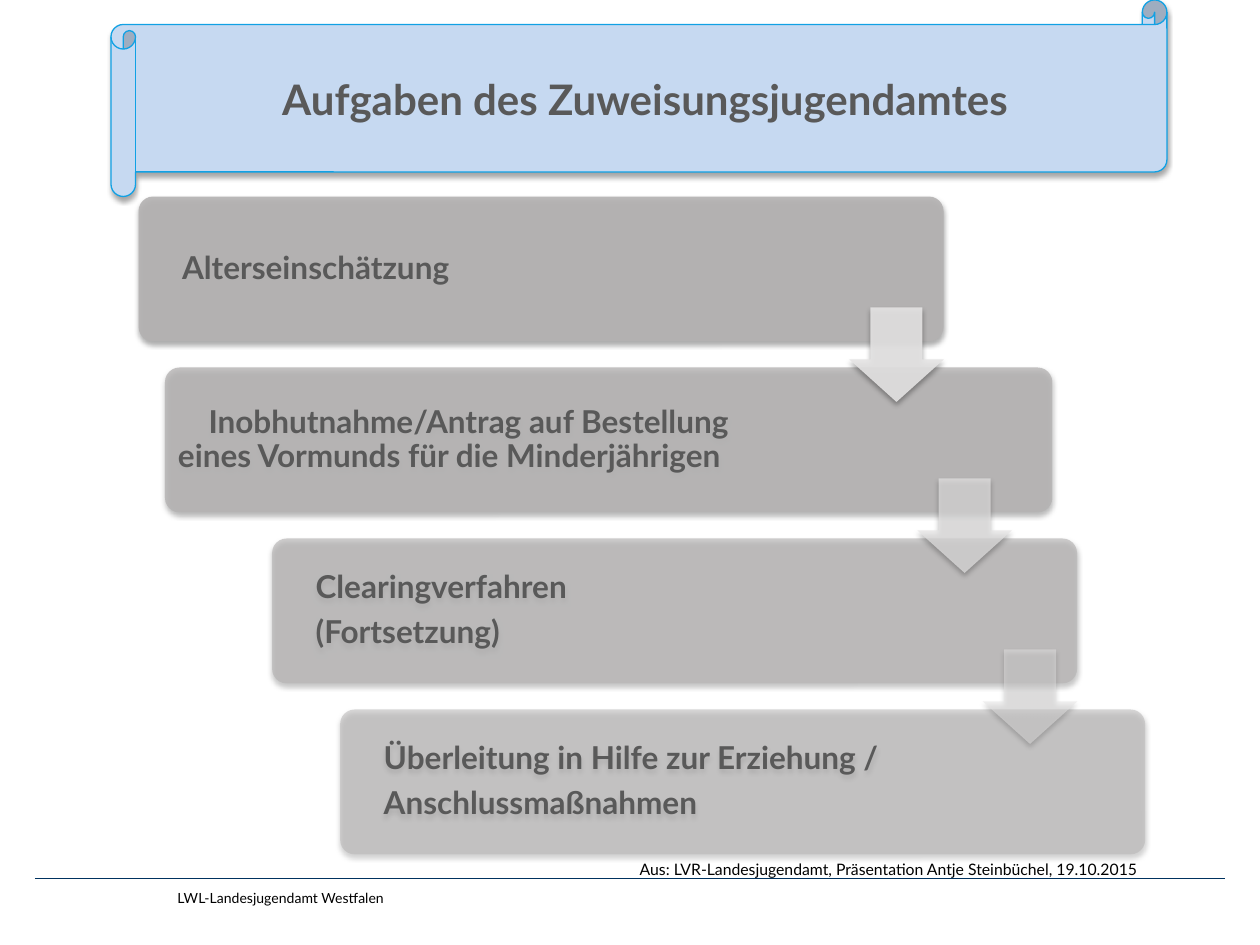
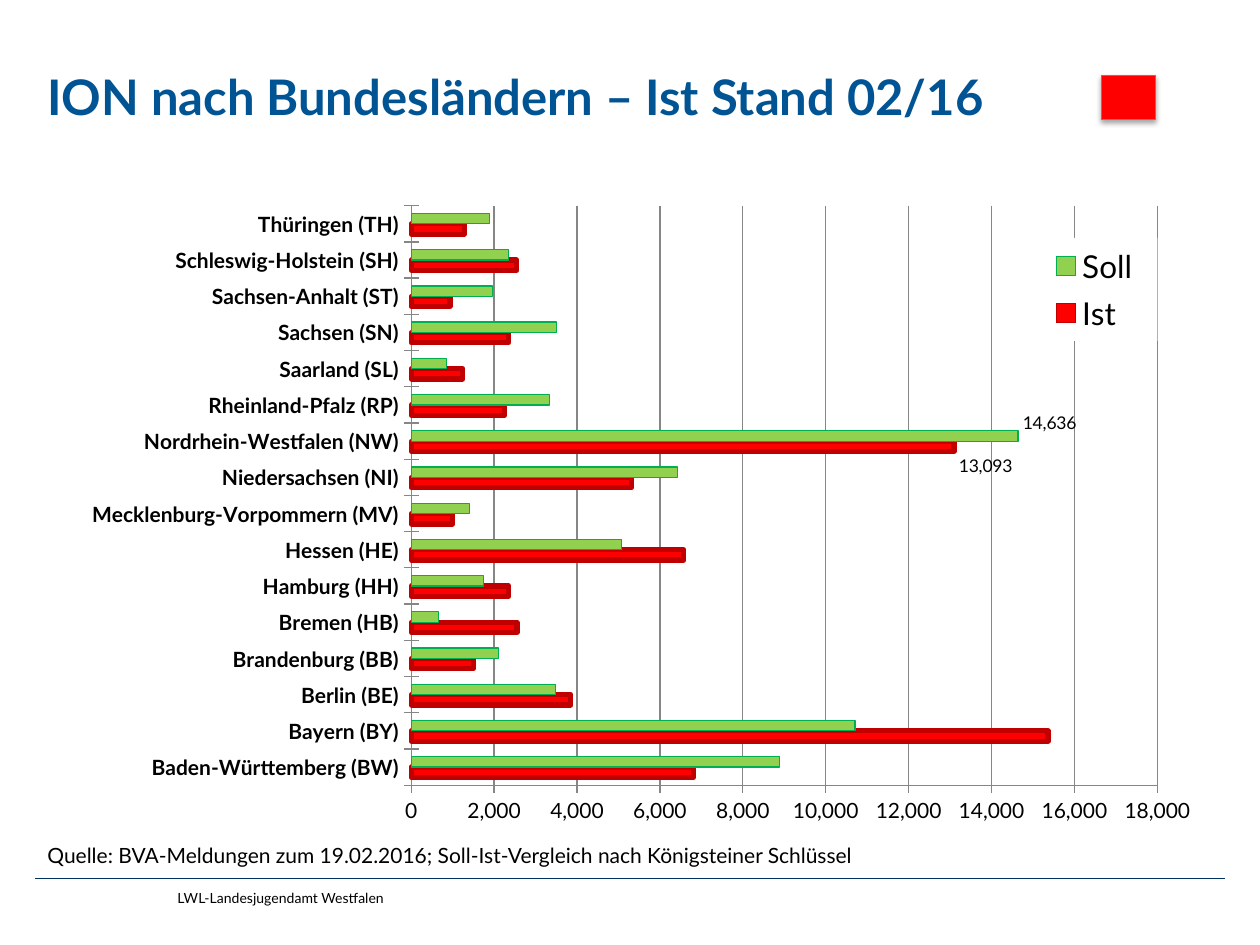
from lxml.etree import SubElement
from pptx import Presentation
from pptx.chart.data import CategoryChartData
from pptx.dml.color import RGBColor
from pptx.enum.chart import XL_CHART_TYPE, XL_LABEL_POSITION, XL_LEGEND_POSITION, XL_TICK_MARK
from pptx.enum.shapes import MSO_CONNECTOR, MSO_SHAPE
from pptx.enum.text import MSO_ANCHOR, PP_ALIGN
from pptx.oxml import parse_xml
from pptx.oxml.ns import nsdecls, qn
from pptx.util import Pt

COLORS = {
    "text": "000000", "heading": "005493", "step_text": "595959",
    "rule": "00325F", "accent": "11A1E4", "banner": "C6D9F1",
    "step": "B4B2B2", "arrow": "E5E4E4", "grid": "868686",
    "red": "FF0000", "dark_red": "C00000", "green": "92D050",
    "dark_green": "00B050", "white": "FFFFFF",
}
RGB = {name: RGBColor.from_string(value) for name, value in COLORS.items()}
FONT = "Lato"


def write_text(shape, lines, size, color="text", bold=False, indent=0, inset=None,
               anchor=MSO_ANCHOR.TOP, **paragraph_format):
    """Fill a shape with one paragraph per line."""
    frame = shape.text_frame
    frame.word_wrap = True
    frame.vertical_anchor = anchor
    if inset is not None:
        for side in ("left", "right", "top", "bottom"):
            setattr(frame, f"margin_{side}", Pt(inset))
    for number, line in enumerate(lines):
        paragraph = frame.add_paragraph() if number else frame.paragraphs[0]
        paragraph.text = line
        if indent:
            properties = paragraph._p.get_or_add_pPr()
            properties.set("marL", "0")
            properties.set("indent", str(Pt(indent)))
        for name, value in paragraph_format.items():
            setattr(paragraph, name, value)
        for run in paragraph.runs:
            for name, value in {"name": FONT, "size": Pt(size), "bold": bold}.items():
                setattr(run.font, name, value)
            run.font.color.rgb = RGB[color]


def add_filled(slide, kind, box, fill, opacity=100, line=None, adjustments=()):
    """Add a preset shape with a soft shadow below it."""
    shape = slide.shapes.add_shape(kind, *map(Pt, box))
    for number, value in enumerate(adjustments):
        shape.adjustments[number] = value
    shape.fill.solid()
    shape.fill.fore_color.rgb = RGB[fill]
    fill_color = shape.element.spPr.find(f"{qn('a:solidFill')}/{qn('a:srgbClr')}")
    if opacity < 100:
        SubElement(fill_color, qn("a:alpha"), val=str(opacity * 1000))
    if line:
        shape.line.color.rgb = RGB[line]
        shape.line.width = Pt(0.75)
    else:
        shape.line.fill.background()
    shape.shadow.inherit = False
    effects = shape.element.spPr.find(qn("a:effectLst"))
    shadow = SubElement(effects, qn("a:outerShdw"), blurRad=str(Pt(3.1)), dist=str(Pt(1.8)),
                        dir="5400000", rotWithShape="0")
    shadow_color = SubElement(shadow, qn("a:srgbClr"), val="000000")
    SubElement(shadow_color, qn("a:alpha"), val="35000")
    return shape


presentation = Presentation()
presentation.slide_width, presentation.slide_height = Pt(720), Pt(540)

# Footer rule and footer text on both slides
slides = []
for _ in range(2):
    slide = presentation.slides.add_slide(presentation.slide_layouts[6])
    rule = slide.shapes.add_connector(MSO_CONNECTOR.STRAIGHT, Pt(20), Pt(502), Pt(700), Pt(502))
    rule.line.color.rgb = RGB["rule"]
    rule.line.width = Pt(0.5)
    SubElement(rule._element.spPr, qn("a:effectLst"))
    footer = slide.shapes.add_textbox(Pt(94.3), Pt(504.7), Pt(522), Pt(11.5))
    write_text(footer, ["LWL-Landesjugendamt Westfalen"], 8)
    slides.append(slide)
tasks_slide, states_slide = slides

# Slide 1: banner
banner = add_filled(tasks_slide, MSO_SHAPE.HORIZONTAL_SCROLL, (63.4, 0, 603.4, 112.3),
                    "banner", line="accent")
write_text(banner, ["Aufgaben des Zuweisungsjugendamtes"], 24, "step_text", bold=True,
           anchor=MSO_ANCHOR.MIDDLE, alignment=PP_ALIGN.CENTER)

# Slide 1: staircase of steps
STEP_PITCH = 97.7
steps = [
    (79.2, 460, 90, ["Alterseinschätzung"]),
    (94.3, 507, 77, ["Inobhutnahme/Antrag auf Bestellung\veines Vormunds für die Minderjährigen"]),
    (155.5, 460, 63, ["Clearingverfahren", "(Fortsetzung)"]),
    (194.4, 460, 50, ["Überleitung in Hilfe zur Erziehung /", "Anschlussmaßnahmen"]),
]
for number, (left, width, opacity, lines) in enumerate(steps):
    step = add_filled(tasks_slide, MSO_SHAPE.ROUNDED_RECTANGLE,
                      (left, 112.3 + number * STEP_PITCH, width, 82.8),
                      "step", opacity, adjustments=[0.1])
    write_text(step, lines, 18, "step_text", bold=True, indent=17.5, inset=5,
               anchor=MSO_ANCHOR.MIDDLE, alignment=PP_ALIGN.LEFT,
               line_spacing=0.9, space_after=Pt(6.3))

# Slide 1: arrows between the steps
for number, (left, opacity) in enumerate([(485.3, 90), (524.2, 70), (561.6, 50)]):
    add_filled(tasks_slide, MSO_SHAPE.DOWN_ARROW,
               (left, 175.7 + number * STEP_PITCH, 54, 54),
               "arrow", opacity, adjustments=[0.55, 0.45])

# Slide 1: credit
credit = tasks_slide.shapes.add_textbox(Pt(0), Pt(487.5), Pt(656.6), Pt(20))
write_text(credit, ["Aus: LVR-Landesjugendamt, Präsentation Antje Steinbüchel, 19.10.2015"], 9,
           alignment=PP_ALIGN.RIGHT)

# Slide 2: source, title and red marker
source = states_slide.shapes.add_textbox(Pt(20), Pt(478), Pt(680), Pt(21.6))
write_text(source, ["Quelle: BVA-Meldungen zum 19.02.2016; Soll-Ist-Vergleich nach Königsteiner Schlüssel"], 12)
title = states_slide.shapes.add_textbox(Pt(20), Pt(34.6), Pt(680), Pt(73.4))
write_text(title, ["ION nach Bundesländern – Ist Stand 02/16"], 28, "heading", bold=True)
add_filled(states_slide, MSO_SHAPE.RECTANGLE, (629.3, 43.2, 31, 25.2), "red", line="accent")

# Slide 2: chart data, listed from bottom to top
states = [
    ("Baden-Württemberg (BW)", 6806, 8877),
    ("Bayern (BY)", 15360, 10709),
    ("Berlin (BE)", 3851, 3484),
    ("Brandenburg (BB)", 1503, 2112),
    ("Bremen (HB)", 2552, 660),
    ("Hamburg (HH)", 2353, 1746),
    ("Hessen (HE)", 6577, 5078),
    ("Mecklenburg-Vorpommern (MV)", 1003, 1400),
    ("Niedersachsen (NI)", 5314, 6432),
    ("Nordrhein-Westfalen (NW)", 13093, 14636),
    ("Rheinland-Pfalz (RP)", 2249, 3338),
    ("Saarland (SL)", 1245, 843),
    ("Sachsen (SN)", 2346, 3508),
    ("Sachsen-Anhalt (ST)", 933, 1953),
    ("Schleswig-Holstein (SH)", 2544, 2349),
    ("Thüringen (TH)", 1278, 1880),
]
names, actual, target = zip(*states)
chart_data = CategoryChartData(number_format="#,##0")
chart_data.categories = names
chart_data.add_series("Ist", actual)
chart_data.add_series("Soll", target)
chart = states_slide.shapes.add_chart(XL_CHART_TYPE.BAR_CLUSTERED, Pt(38.2), Pt(110.2),
                                      Pt(656), Pt(368), chart_data).chart
chart.has_title = False
chart.font.name = FONT
chart.font.size = Pt(18)
chart.font.color.rgb = RGB["text"]

# Slide 2: bars, with labels on Nordrhein-Westfalen only
plot = chart.plots[0]
for name, value in {"gap_width": 150, "overlap": 0, "vary_by_categories": False}.items():
    setattr(plot, name, value)
bar_styles = [("red", "dark_red", 3), ("green", "dark_green", 0.75)]
for series, (fill, line, width) in zip(plot.series, bar_styles):
    series.format.fill.solid()
    series.format.fill.fore_color.rgb = RGB[fill]
    series.format.line.color.rgb = RGB[line]
    series.format.line.width = Pt(width)
    series.data_labels.show_value = False
    label = series.points[names.index("Nordrhein-Westfalen (NW)")].data_label
    label.position = XL_LABEL_POSITION.OUTSIDE_END
    label.font.size = Pt(10)
    label.font.name = FONT

# Slide 2: axes
for axis, bold in ((chart.category_axis, True), (chart.value_axis, False)):
    axis.major_tick_mark = XL_TICK_MARK.CROSS
    axis.tick_labels.font.size = Pt(12)
    axis.tick_labels.font.bold = bold
    axis.format.line.color.rgb = RGB["grid"]
    axis.format.line.width = Pt(0.75)
value_axis = chart.value_axis
for name, value in {"minimum_scale": 0, "maximum_scale": 18000, "major_unit": 2000}.items():
    setattr(value_axis, name, value)
value_axis.major_gridlines.format.line.color.rgb = RGB["grid"]
value_axis.major_gridlines.format.line.width = Pt(0.75)
value_axis.tick_labels.number_format = "#,##0"
value_axis.tick_labels.number_format_is_linked = False

# Slide 2: legend on white
chart.has_legend = True
legend = chart.legend
legend.position = XL_LEGEND_POSITION.RIGHT
legend.include_in_layout = True
legend.font.size = Pt(18)
legend_element = chart._chartSpace.xpath("c:chart/c:legend")[0]
legend_element.find(qn("c:txPr")).addprevious(parse_xml(
    f'<c:spPr {nsdecls("c", "a")}><a:solidFill><a:srgbClr val="{COLORS["white"]}"/>'
    "</a:solidFill></c:spPr>"))

# Slide 2: fixed places of plot area, legend and labels, as parts of the chart
plot_area = chart._chartSpace.xpath("c:chart/c:plotArea")[0]
actual_label, target_label = plot_area.xpath(".//c:dLbl")
layouts = [
    (plot_area, 0, {"layoutTarget": "inner", "xMode": "edge", "yMode": "edge",
                    "x": 0.3, "y": 0.02, "w": 0.65, "h": 0.9}),
    (legend_element, 1, {"xMode": "edge", "yMode": "edge",
                         "x": 0.84, "y": 0.07, "w": 0.11, "h": 0.16}),
    (actual_label, 1, {"x": 0, "y": 0.03}),
    (target_label, 1, {"x": 0, "y": -0.02}),
]
for element, position, places in layouts:
    for old_layout in element.findall(qn("c:layout")):
        element.remove(old_layout)
    layout = parse_xml(f'<c:layout {nsdecls("c")}/>')
    manual = SubElement(layout, qn("c:manualLayout"))
    for name, value in places.items():
        SubElement(manual, qn(f"c:{name}"), val=str(value))
    element.insert(position, layout)

presentation.save("out.pptx")
